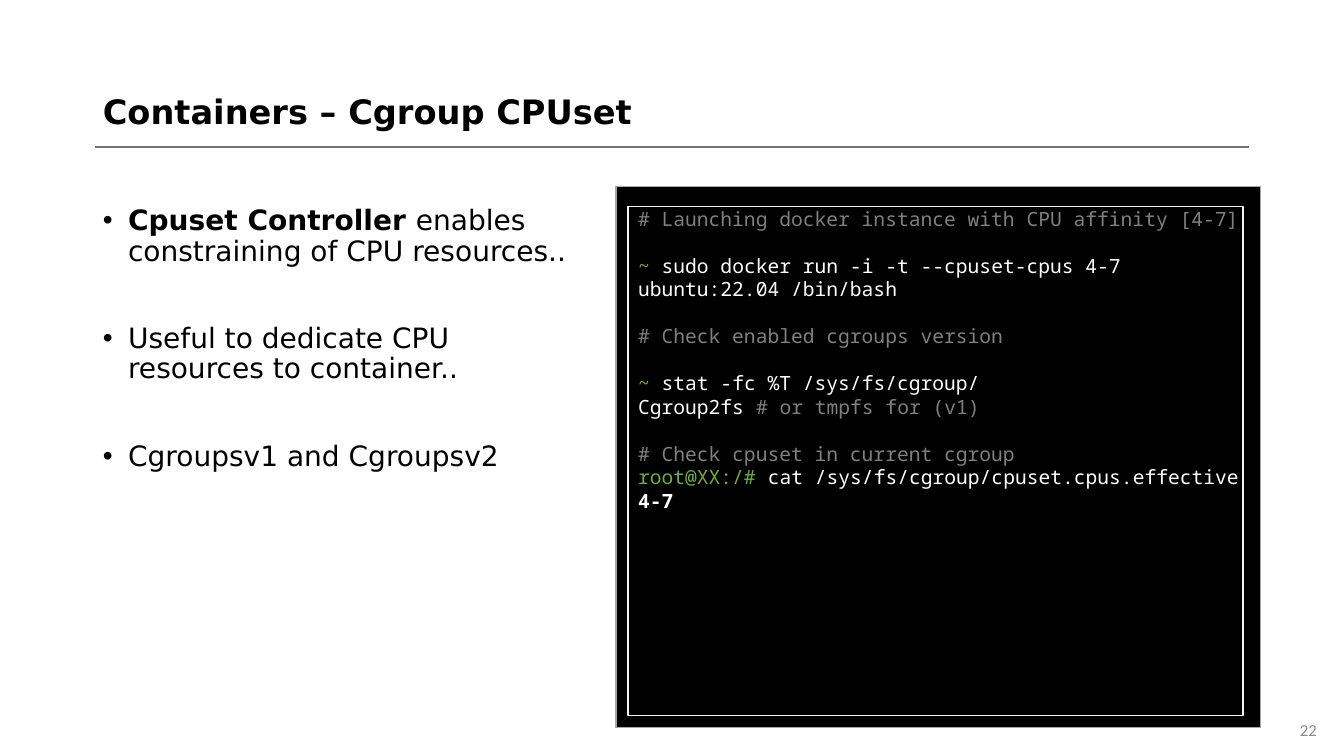
from lxml.etree import SubElement
from pptx import Presentation
from pptx.dml.color import RGBColor
from pptx.enum.shapes import MSO_CONNECTOR, MSO_SHAPE
from pptx.enum.text import MSO_ANCHOR, MSO_AUTO_SIZE, PP_ALIGN
from pptx.oxml.ns import qn
from pptx.util import Inches, Pt

BLACK = RGBColor(0x00, 0x00, 0x00)
WHITE = RGBColor(0xFF, 0xFF, 0xFF)
RULE_GRAY = RGBColor(0x76, 0x71, 0x71)
FRAME_GRAY = RGBColor(0xA6, 0xA6, 0xA6)
INNER_GRAY = RGBColor(0xF2, 0xF2, 0xF2)
COMMENT_GRAY = RGBColor(0x80, 0x80, 0x80)
PROMPT_GREEN = RGBColor(0x70, 0xAD, 0x47)
NUMBER_GRAY = RGBColor(0x8C, 0x8C, 0x8C)

TEXT_FONT = "DejaVu Sans"
CODE_FONT = "Noto Sans Mono"

TITLE = "Containers – Cgroup CPUset"
BULLETS = [
    [("Cpuset Controller ", True), ("enables constraining of CPU resources..", False)],
    [("Useful to dedicate CPU resources to container..", False)],
    [("Cgroupsv1 and Cgroupsv2", False)],
]
TERMINAL_BLOCKS = [
    [[("# Launching docker instance with CPU affinity [4-7]", COMMENT_GRAY, False)]],
    [[("~ ", PROMPT_GREEN, False),
      ("sudo docker run -i -t --cpuset-cpus 4-7 ubuntu:22.04 /bin/bash", WHITE, False)]],
    [[("# Check enabled cgroups version", COMMENT_GRAY, False)]],
    [[("~ ", PROMPT_GREEN, False), ("stat -fc %T /sys/fs/cgroup/", WHITE, False)],
     [("Cgroup2fs ", WHITE, False), ("# or tmpfs for (v1)", COMMENT_GRAY, False)]],
    [[("# Check cpuset in current cgroup", COMMENT_GRAY, False)],
     [("root@XX:/# ", PROMPT_GREEN, False),
      ("cat /sys/fs/cgroup/cpuset.cpus.effective", WHITE, False)],
     [("4-7", WHITE, True)]],
]
TERMINAL_FRAMES = [
    ((6.11, 1.85, 6.39, 5.37), FRAME_GRAY),
    ((6.23, 2.05, 6.1, 5.05), INNER_GRAY),
]
SLIDE_NUMBER = "22"


def place(shape, left, top, width, height):
    shape.left, shape.top = Inches(left), Inches(top)
    shape.width, shape.height = Inches(width), Inches(height)


def style(run, font_name, size, color, bold=False):
    run.font.name = font_name
    run.font.size = Pt(size)
    run.font.color.rgb = color
    run.font.bold = bold


def add_run(paragraph, text, *look):
    run = paragraph.add_run()
    run.text = text
    style(run, *look)


def next_paragraph(frame, index):
    return frame.add_paragraph() if index else frame.paragraphs[0]


def add_title(slide):
    title = slide.shapes.title
    place(title, 0.92, 0.4, 11.5, 1.45)
    frame = title.text_frame
    frame.text = TITLE
    frame.auto_size = MSO_AUTO_SIZE.NONE
    frame.vertical_anchor = MSO_ANCHOR.MIDDLE
    heading = frame.paragraphs[0]
    heading.alignment = PP_ALIGN.LEFT
    heading.line_spacing = 0.9
    style(heading.runs[0], TEXT_FONT, 24, BLACK, True)

    rule = slide.shapes.add_connector(
        MSO_CONNECTOR.STRAIGHT, Inches(0.94), Inches(1.46), Inches(12.39), Inches(1.46))
    rule.line.color.rgb = RULE_GRAY
    rule.line.width = Pt(1)
    SubElement(rule._element.spPr, qn("a:effectLst"))


def add_bullets(slide):
    body = slide.placeholders[1]
    place(body, 0.92, 2, 5.03, 4.76)
    frame = body.text_frame
    frame.auto_size = MSO_AUTO_SIZE.NONE
    for index, parts in enumerate(BULLETS):
        paragraph = next_paragraph(frame, index)
        paragraph.line_spacing = 0.9
        paragraph.space_before = Pt(41 if index else 0)
        properties = paragraph._p.get_or_add_pPr()
        properties.set("marL", str(Inches(0.25)))
        properties.set("indent", str(Inches(-0.25)))
        SubElement(properties, qn("a:buFont")).set("typeface", "Arial")
        SubElement(properties, qn("a:buChar")).set("char", "•")
        for text, bold in parts:
            add_run(paragraph, text, TEXT_FONT, 20, BLACK, bold)


def add_terminal(slide):
    for box, outline in TERMINAL_FRAMES:
        frame_box = slide.shapes.add_shape(MSO_SHAPE.RECTANGLE, *map(Inches, box))
        frame_box.shadow.inherit = False
        frame_box.fill.solid()
        frame_box.fill.fore_color.rgb = BLACK
        frame_box.line.color.rgb = outline
        frame_box.line.width = Pt(1)

    session = slide.shapes.add_textbox(Inches(6.23), Inches(2), Inches(6.22), Inches(3.4))
    frame = session.text_frame
    frame.word_wrap = True
    lines = [(block_index > 0 and line_index == 0, line)
             for block_index, block in enumerate(TERMINAL_BLOCKS)
             for line_index, line in enumerate(block)]
    for index, (starts_block, parts) in enumerate(lines):
        paragraph = next_paragraph(frame, index)
        paragraph.space_before = Pt(16.8 if starts_block else 0)
        for text, color, bold in parts:
            add_run(paragraph, text, CODE_FONT, 14, color, bold)


def add_slide_number(slide):
    number = slide.shapes.add_textbox(Inches(10.16), Inches(7.04), Inches(3), Inches(0.4))
    frame = number.text_frame
    frame.text = SLIDE_NUMBER
    frame.word_wrap = True
    frame.vertical_anchor = MSO_ANCHOR.MIDDLE
    frame.paragraphs[0].alignment = PP_ALIGN.RIGHT
    style(frame.paragraphs[0].runs[0], "Calibri", 12, NUMBER_GRAY)


def main():
    presentation = Presentation()
    presentation.slide_width = Inches(13.33)
    presentation.slide_height = Inches(7.5)
    slide = presentation.slides.add_slide(presentation.slide_layouts[1])
    add_title(slide)
    add_bullets(slide)
    add_terminal(slide)
    add_slide_number(slide)
    presentation.save("out.pptx")


if __name__ == "__main__":
    main()
